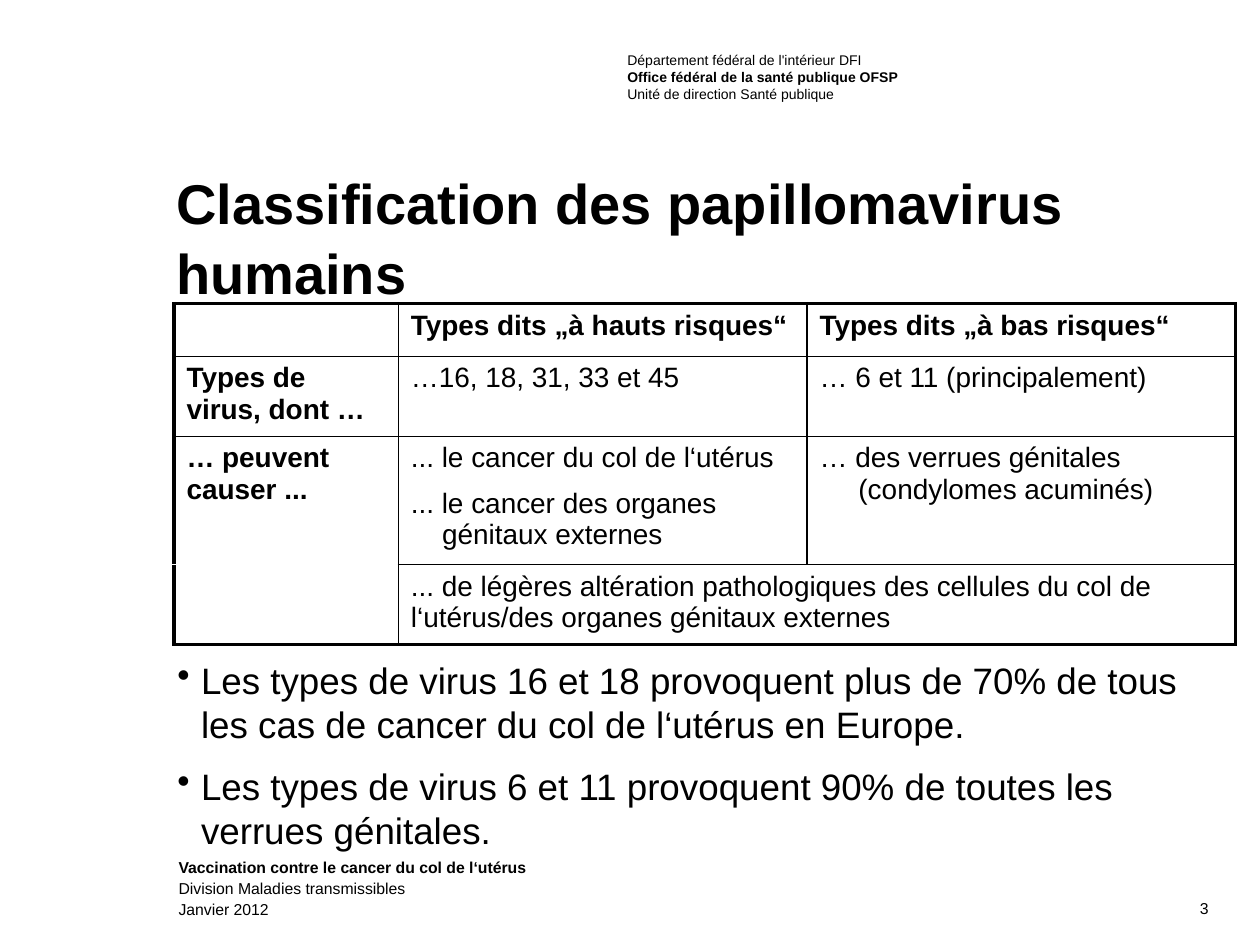
from lxml import etree
from pptx import Presentation
from pptx.dml.color import RGBColor
from pptx.enum.text import PP_ALIGN
from pptx.oxml.ns import qn
from pptx.util import Pt

RIGHT = PP_ALIGN.RIGHT
BLACK = RGBColor(0, 0, 0)
WHITE = RGBColor(255, 255, 255)
THICK, THIN = 2.25, 1

deck = Presentation()
deck.slide_width, deck.slide_height = Pt(720), Pt(540)
slide = deck.slides.add_slide(deck.slide_layouts[6])


def write(frame, lines, size, bold=(), hang=0, bullet=False, **form):
    """Fill a frame, one paragraph a line; bold holds the indexes of bold lines."""
    frame.word_wrap = True
    gap = form.pop("space_before", None)
    for i, line in enumerate(lines):
        para = frame.paragraphs[0] if i == 0 else frame.add_paragraph()
        para.text = line
        props = para._p.get_or_add_pPr()
        if hang:
            props.set("marL", str(Pt(hang)))
            props.set("indent", str(Pt(-hang)))
        if bullet:
            etree.SubElement(props, qn("a:buChar")).set("char", "•")
        for name, value in form.items():
            setattr(para, name, value)
        if i and gap:
            para.space_before = gap
        look = {"name": "Arial", "size": Pt(size), "bold": i in bold}
        for run in para.runs:
            for name, value in look.items():
                setattr(run.font, name, value)
            run.font.color.rgb = BLACK


def edge(cell, order, side, width, color):
    line = etree.Element(qn("a:ln" + side), w=str(Pt(width)))
    fill = etree.SubElement(line, qn("a:solidFill"))
    etree.SubElement(fill, qn("a:srgbClr"), val=str(color))
    cell._tc.get_or_add_tcPr().insert(order, line)


# Text around the table: place, lines, size, format
texts = [
    ((95, 485.3, 417.6, 44),
     ["Vaccination contre le cancer du col de l‘utérus",
      "Division Maladies transmissibles", "Janvier 2012"],
     9, {"bold": [0], "line_spacing": Pt(12)}),
    ((351.4, 25.9, 340.6, 36.7),
     ["Département fédéral de l'intérieur DFI",
      "Office fédéral de la santé publique OFSP",
      "Unité de direction Santé publique"],
     8, {"bold": [1]}),
    ((93.6, 90.7, 598.3, 85),
     ["Classification des papillomavirus humains"],
     32, {"bold": [0], "line_spacing": 1.05}),
    ((94.3, 372.2, 597.6, 120),
     ["Les types de virus 16 et 18 provoquent plus de 70% de tous "
      "les cas de cancer du col de l‘utérus en Europe.",
      "Les types de virus 6 et 11 provoquent 90% de toutes les "
      "verrues génitales."],
     21, {"hang": 13.5, "bullet": True, "space_before": Pt(10.5)}),
    ((529.9, 509, 167.8, 26), ["3"],
     9, {"alignment": RIGHT, "line_spacing": Pt(12)}),
]
for place, lines, size, form in texts:
    box = slide.shapes.add_textbox(*map(Pt, place))
    write(box.text_frame, lines, size, **form)

# Table: each cell holds its lines and its hanging indent
rows = [
    [([], 0), (["Types dits „à hauts risques“"], 0),
     (["Types dits „à bas risques“"], 0)],
    [(["Types de virus, dont …"], 0), (["…16, 18, 31, 33 et 45"], 0),
     (["… 6 et 11 (principalement)"], 0)],
    [(["… peuvent causer ..."], 0),
     (["... le cancer du col de l‘utérus",
       "... le cancer des organes\vgénitaux externes"], 17.8),
     (["… des verrues génitales\v(condylomes acuminés)"], 22.2)],
    [([], 0),
     (["... de légères altération pathologiques des cellules du col de "
       "l‘utérus/des organes génitaux externes"], 0), ([], 0)],
]
widths = [128.2, 233.6, 245]
heights = [30.2, 45.7, 73.2, 45.7]
frame = slide.shapes.add_table(4, 3, Pt(99.4), Pt(173.5),
                               Pt(sum(widths)), Pt(sum(heights)))
table = frame.table
table.first_row = table.horz_banding = False
for col, width in zip(table.columns, widths):
    col.width = Pt(width)
for row, height in zip(table.rows, heights):
    row.height = Pt(height)
table.cell(3, 1).merge(table.cell(3, 2))

for r, row in enumerate(rows):
    for c, (lines, hang) in enumerate(row):
        cell = table.cell(r, c)
        cell.fill.background()
        outer = {"L": c == 0, "R": c == 2 or (r, c) == (3, 1),
                 "T": r == 0, "B": r == 3}
        # The two lower cells of the first column read as one
        blank = {(2, 0): "B", (3, 0): "T"}.get((r, c))
        for order, (side, thick) in enumerate(outer.items()):
            edge(cell, order, side, THICK if thick else THIN,
                 WHITE if side == blank else BLACK)
        head = r == 0 or c == 0
        write(cell.text_frame, lines, 16, bold=[0] if head else [],
              hang=hang, space_before=Pt(8))

deck.save("out.pptx")
